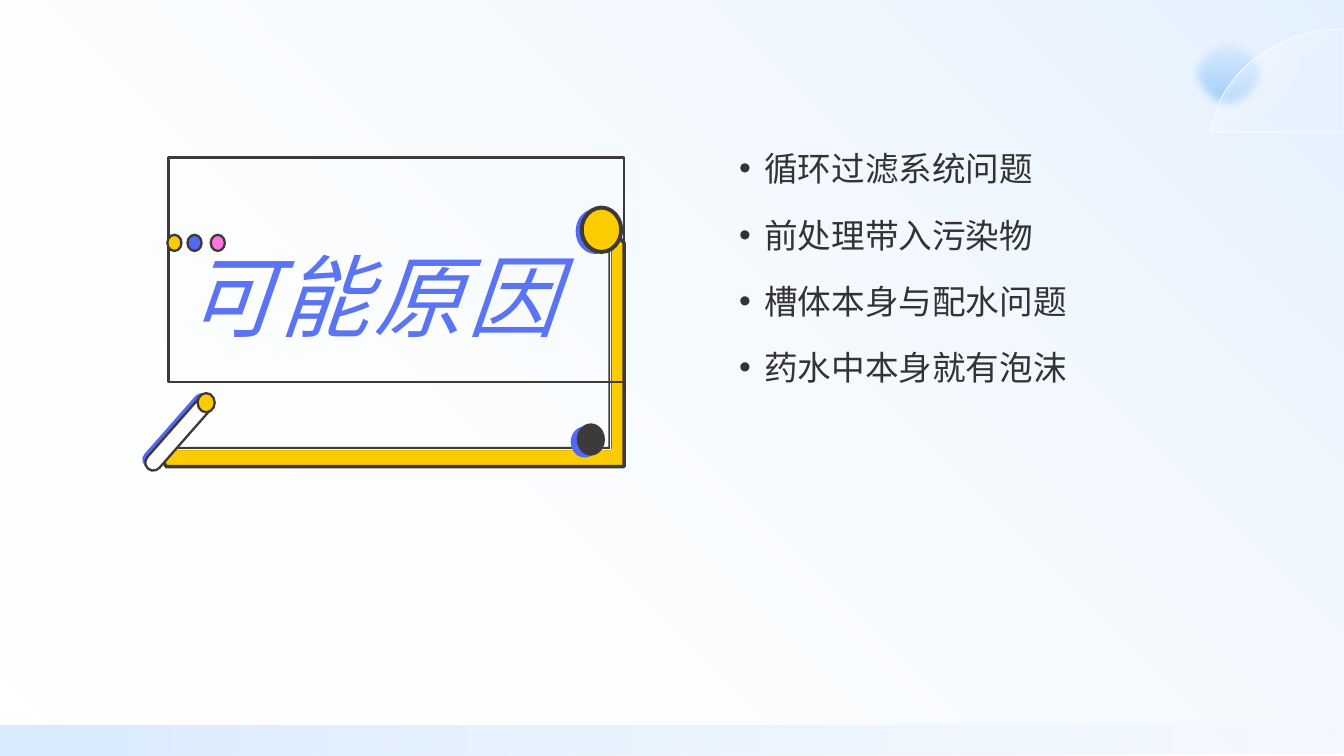
from dataclasses import dataclass

from pptx import Presentation
from pptx.dml.color import RGBColor
from pptx.enum.shapes import MSO_SHAPE
from pptx.enum.text import MSO_ANCHOR, MSO_AUTO_SIZE, PP_ALIGN
from pptx.oxml import parse_xml
from pptx.oxml.ns import nsdecls, qn
from pptx.util import Inches, Pt

RECT = MSO_SHAPE.RECTANGLE
OVAL = MSO_SHAPE.OVAL
PILL = MSO_SHAPE.ROUNDED_RECTANGLE


@dataclass(frozen=True)
class Theme:
    white: str = "FFFFFF"
    sky: str = "419BFD"
    pale: str = "D9EBFF"
    ink: str = "3E3A39"
    gold: str = "FCCB00"
    blue: str = "5269F3"
    pink: str = "FF75DE"
    title: str = "5B74F4"
    text: str = "333333"
    head_font: str = "Noto Sans CJK JP"
    body_font: str = "Arial"
    head_size: int = 64
    body_size: int = 24


THEME = Theme()
CAUSES = ["循环过滤系统问题", "前处理带入污染物", "槽体本身与配水问题", "药水中本身就有泡沫"]


def paint(shape, fill=None, line=None, width=1.0):
    shape.shadow.inherit = False
    if fill:
        shape.fill.solid()
        shape.fill.fore_color.rgb = RGBColor.from_string(fill)
    else:
        shape.fill.background()
    if line:
        shape.line.color.rgb = RGBColor.from_string(line)
        shape.line.width = Pt(width)
    else:
        shape.line.fill.background()
    return shape


def add_form(slide, kind, box, fill=None, line=None, width=1.0):
    shape = slide.shapes.add_shape(kind, *map(Inches, box))
    return paint(shape, fill, line, width)


def add_path(slide, points, fill=None, line=None, width=1.0, close=True):
    spots = [(Inches(x), Inches(y)) for x, y in points]
    pen = slide.shapes.build_freeform(*spots[0])
    pen.add_line_segments(spots[1:], close=close)
    return paint(pen.convert_to_shape(), fill, line, width)


def fade(shape, stops, angle):
    """Fill with a gradient; each stop is place, colour and opacity in percent."""
    marks = "".join(
        f'<a:gs pos="{place * 1000}"><a:srgbClr val="{color}">'
        f'<a:alpha val="{alpha * 1000}"/></a:srgbClr></a:gs>'
        for place, color, alpha in stops
    )
    grad = parse_xml(
        f'<a:gradFill {nsdecls("a")} rotWithShape="1"><a:gsLst>{marks}</a:gsLst>'
        f'<a:lin ang="{angle * 60000}" scaled="0"/></a:gradFill>'
    )
    props = shape._element.spPr
    props.replace(props.find(qn("a:noFill")), grad)


def blur(shape, size):
    edge = parse_xml(f'<a:softEdge {nsdecls("a")} rad="{Inches(size)}"/>')
    shape._element.spPr.find(qn("a:effectLst")).append(edge)


def curve(start, pull, push, end, count=32):
    """Points along a cubic Bezier curve."""
    points = []
    for step in range(count + 1):
        t = step / count
        u = 1 - t
        points.append(tuple(
            u**3 * a + 3 * u * u * t * b + 3 * u * t * t * c + t**3 * d
            for a, b, c, d in zip(start, pull, push, end)
        ))
    return points


def add_back(slide):
    wash = add_form(slide, RECT, (0, 0, 13.33, 7.48))
    fade(wash, [(0, THEME.white, 0), (100, THEME.sky, 15)], 315)
    ball = add_form(slide, OVAL, (11.78, 0.32, 0.81, 0.81))
    fade(ball, [(0, THEME.sky, 0), (100, THEME.sky, 50)], 90)
    blur(ball, 0.09)
    arc = curve((12.02, 1.23), (12.14, 0.69), (12.68, 0.29), (13.33, 0.29))
    dome = add_path(slide, [(13.33, 1.31), (12, 1.31)] + arc, line=THEME.white, width=0.5)
    fade(dome, [(39, THEME.white, 5), (83, THEME.white, 50)], 225)
    strip = add_form(slide, RECT, (0, 7.2, 13.33, 0.3))
    fade(strip, [(0, THEME.pale, 0), (100, THEME.pale, 100)], 180)


def add_pen(slide):
    for box, fill, line in [
        ((1.28, 4.19, 0.93, 0.16), THEME.blue, None),
        ((1.31, 4.22, 0.93, 0.16), THEME.white, THEME.ink),
    ]:
        stick = add_form(slide, PILL, box, fill, line, 1.63)
        stick.adjustments[0] = 0.5
        stick.rotation = -48.7
    add_form(slide, OVAL, (1.96, 3.9, 0.17, 0.19), THEME.gold, THEME.ink, 1.63)


def add_frame(slide):
    band = [(1.56, 4.45), (6.05, 4.45), (6.05, 2.28), (6.06, 2.28), (6.08, 2.29),
            (6.19, 2.41), (6.19, 4.63), (1.65, 4.63), (1.56, 4.48), (1.55, 4.46)]
    add_path(slide, band, THEME.gold, THEME.ink, 2.44, close=False)
    add_form(slide, RECT, (1.56, 2.24, 4.5, 2.22), line=THEME.white, width=0.75)
    add_form(slide, RECT, (1.67, 1.56, 4.52, 2.23), line=THEME.ink, width=2)
    add_pen(slide)
    add_form(slide, OVAL, (5.71, 2.07, 0.39, 0.45), THEME.blue)
    add_form(slide, OVAL, (5.77, 2.06, 0.39, 0.44), THEME.gold, THEME.ink, 2.8)
    add_form(slide, OVAL, (5.66, 4.23, 0.28, 0.31), THEME.blue)
    add_form(slide, OVAL, (5.72, 4.2, 0.28, 0.32), THEME.ink)
    for left, color in [(1.66, THEME.gold), (1.86, THEME.blue), (2.09, THEME.pink)]:
        add_form(slide, OVAL, (left, 2.33, 0.14, 0.16), color, THEME.ink, 1.63)


def style(font, name, size, color):
    font.name = name
    font.size = Pt(size)
    font.color.rgb = RGBColor.from_string(color)


def set_title(slide, text):
    title = slide.shapes.title
    title.left, title.top, title.width, title.height = map(Inches, (1.55, 2.25, 4.27, 1.35))
    frame = title.text_frame
    frame.text = text
    frame.word_wrap = True
    frame.auto_size = MSO_AUTO_SIZE.NONE
    frame.vertical_anchor = MSO_ANCHOR.MIDDLE
    para = frame.paragraphs[0]
    para.alignment = PP_ALIGN.CENTER
    run = para.runs[0]
    style(run.font, THEME.head_font, THEME.head_size, THEME.title)
    run.font.italic = True
    props = run._r.get_or_add_rPr()
    props.set("spc", "300")
    props.append(parse_xml(f'<a:ea {nsdecls("a")} typeface="{THEME.head_font}"/>'))
    slide.shapes._spTree.append(title._element)


def add_list(slide, items):
    box = slide.shapes.add_textbox(*map(Inches, (7.33, 1.35, 5.24, 3.4)))
    frame = box.text_frame
    frame.word_wrap = True
    frame.margin_left = frame.margin_top = frame.margin_right = frame.margin_bottom = 0
    frame.text = "\n".join(items)
    for index, para in enumerate(frame.paragraphs):
        para.line_spacing = Pt(37.4)
        para.space_before = Pt(10 if index else 0)
        props = para._p.get_or_add_pPr()
        props.set("marL", str(Inches(0.25)))
        props.set("indent", str(-Inches(0.25)))
        props.append(parse_xml(f'<a:buFont {nsdecls("a")} typeface="Arial"/>'))
        props.append(parse_xml(f'<a:buChar {nsdecls("a")} char="•"/>'))
        style(para.runs[0].font, THEME.body_font, THEME.body_size, THEME.text)


def main():
    deck = Presentation()
    deck.slide_width, deck.slide_height = Inches(13.33), Inches(7.5)
    slide = deck.slides.add_slide(deck.slide_layouts[5])
    add_back(slide)
    add_list(slide, CAUSES)
    add_frame(slide)
    set_title(slide, "可能原因")
    deck.save("out.pptx")


if __name__ == "__main__":
    main()
